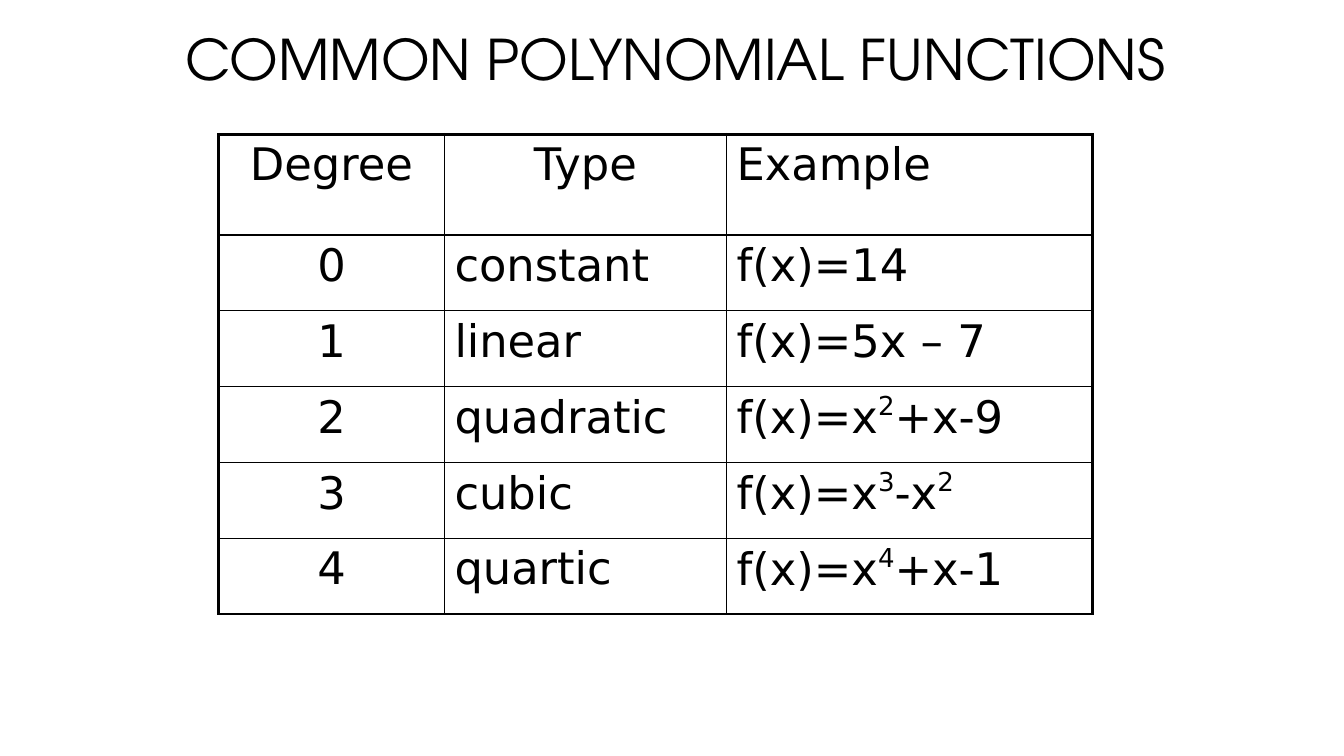
from dataclasses import dataclass

from lxml.etree import SubElement
from pptx import Presentation
from pptx.dml.color import RGBColor
from pptx.enum.text import MSO_ANCHOR, MSO_AUTO_SIZE, PP_ALIGN
from pptx.oxml.ns import qn
from pptx.util import Cm, Pt


@dataclass(frozen=True)
class Theme:
    ink: str = "000000"
    paper: str = "FFFFFF"
    title_font: str = "TeX Gyre Adventor"
    table_font: str = "DejaVu Sans"
    title_size: int = 40
    table_size: int = 32
    outer_line: float = 2.25
    inner_line: float = 1


ROWS = [
    ("Degree", "Type", "Example"),
    ("0", "constant", "f(x)=14"),
    ("1", "linear", "f(x)=5x – 7"),
    ("2", "quadratic", "f(x)=x^2+x-9"),
    ("3", "cubic", "f(x)=x^3-x^2"),
    ("4", "quartic", "f(x)=x^4+x-1"),
]
COLUMN_WIDTHS = (5.69, 7.11, 9.22)
ROW_HEIGHTS = (2.54,) + (1.91,) * (len(ROWS) - 1)


def write_text(frame, text, *, font, size, color, align=PP_ALIGN.LEFT, spacing=1.0):
    """Write one paragraph; the character after each ^ is raised."""
    para = frame.paragraphs[0]
    para.alignment = align
    para.line_spacing = spacing
    para.space_before = Pt(0)
    base, *powers = text.split("^")
    pieces = [(base, False)]
    for power in powers:
        pieces += [(power[0], True), (power[1:], False)]
    for piece, raised in pieces:
        if not piece:
            continue
        span = para.add_run()
        span.text = piece
        span.font.name = font
        span.font.size = Pt(size)
        span.font.bold = False
        span.font.color.rgb = RGBColor.from_string(color)
        if raised:
            span._r.get_or_add_rPr().set("baseline", "40000")


class SlideBuilder:
    def __init__(self, deck, theme):
        self.theme = theme
        self.page = deck.slides.add_slide(deck.slide_layouts[5])
        fill = self.page.background.fill
        fill.solid()
        fill.fore_color.rgb = RGBColor.from_string(theme.paper)

    def title(self, text, left, top, width, height):
        box = self.page.shapes.title
        box.left, box.top = Cm(left), Cm(top)
        box.width, box.height = Cm(width), Cm(height)
        frame = box.text_frame
        frame.word_wrap = True
        frame.auto_size = MSO_AUTO_SIZE.NONE
        frame.vertical_anchor = MSO_ANCHOR.MIDDLE
        write_text(frame, text, font=self.theme.title_font, size=self.theme.title_size,
                   color=self.theme.ink, align=PP_ALIGN.RIGHT, spacing=0.9)

    def table(self, rows, left, top, widths, heights):
        table = self.page.shapes.add_table(
            len(rows), len(widths), Cm(left), Cm(top),
            Cm(sum(widths)), Cm(sum(heights))).table
        table.first_row = table.horz_banding = False
        for column, width in zip(table.columns, widths):
            column.width = Cm(width)
        for row, height in zip(table.rows, heights):
            row.height = Cm(height)
        last_row, last_column = len(rows) - 1, len(widths) - 1
        for r, row in enumerate(rows):
            for c, text in enumerate(row):
                cell = table.cell(r, c)
                centred = c == 0 or (r == 0 and c == 1)
                write_text(cell.text_frame, text, font=self.theme.table_font,
                           size=self.theme.table_size, color=self.theme.ink,
                           align=PP_ALIGN.CENTER if centred else PP_ALIGN.LEFT)
                self.borders(cell, L=c == 0, R=c == last_column,
                             T=r == 0, B=r == last_row)
                cell.fill.background()

    def borders(self, cell, **outer_sides):
        """Draw each side, thicker where it lies on the table's edge."""
        properties = cell._tc.get_or_add_tcPr()
        for side, outer in outer_sides.items():
            width = self.theme.outer_line if outer else self.theme.inner_line
            line = SubElement(properties, qn(f"a:ln{side}"), w=str(Pt(width)))
            fill = SubElement(line, qn("a:solidFill"))
            SubElement(fill, qn("a:srgbClr"), val=self.theme.ink)


def main():
    deck = Presentation()
    deck.slide_width, deck.slide_height = Cm(33.87), Cm(19.05)
    builder = SlideBuilder(deck, Theme())
    builder.title("COMMON POLYNOMIAL FUNCTIONS", 4.27, 0.2, 25.35, 2.74)
    builder.table(ROWS, 5.51, 3.38, COLUMN_WIDTHS, ROW_HEIGHTS)
    deck.save("out.pptx")


if __name__ == "__main__":
    main()
